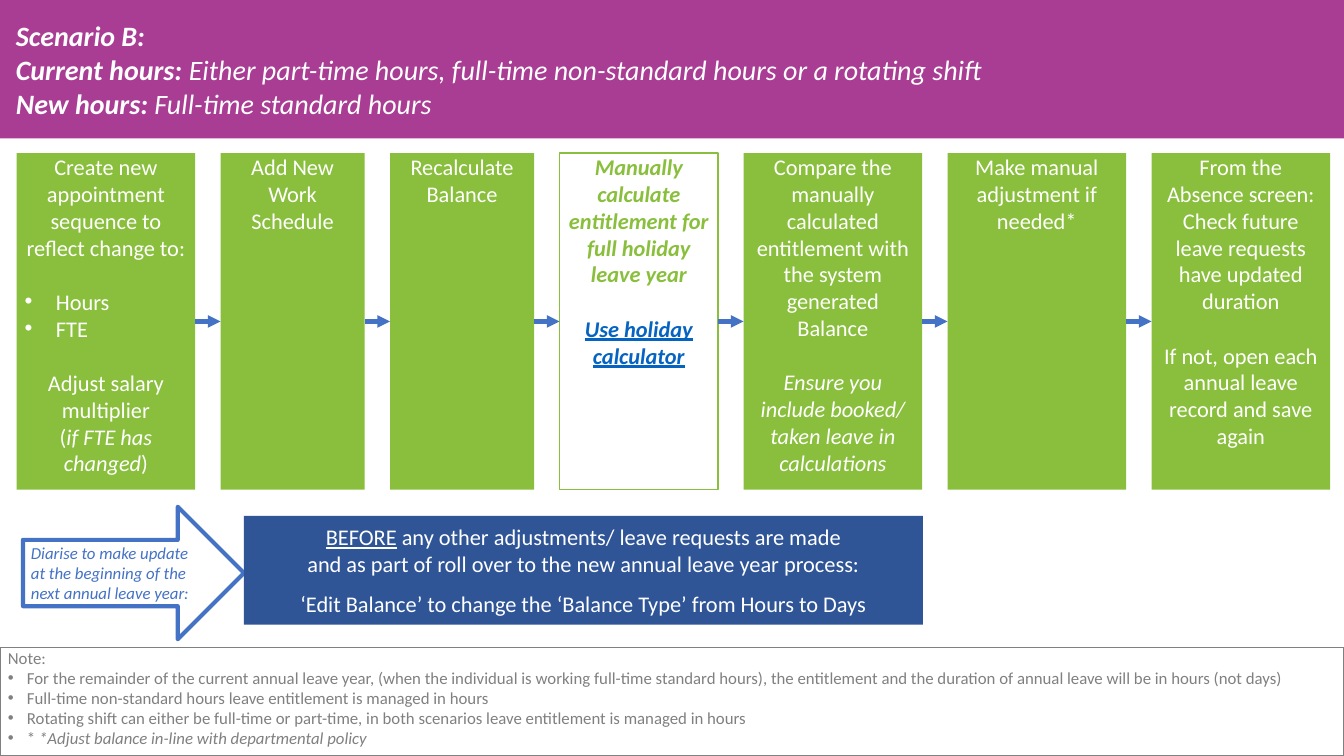
import lxml.etree
import pptx
import pptx.dml.color
import pptx.enum.shapes
import pptx.enum.text
import pptx.oxml.ns
import pptx.util

Cm, Pt = pptx.util.Cm, pptx.util.Pt
Shape = pptx.enum.shapes.MSO_SHAPE
Align = pptx.enum.text.PP_ALIGN
Anchor = pptx.enum.text.MSO_ANCHOR

WHITE, GREEN, PURPLE, NAVY = "FFFFFF", "89BF3C", "A93D94", "2F5597"
BLUE, GREY, LINK = "4472C4", "808080", "0563C1"
BOLD, ITALIC, UNDERLINE = {"bold": True}, {"italic": True}, {"underline": True}
BOLD_ITALIC = {**BOLD, **ITALIC}


def colour(value):
    return pptx.dml.color.RGBColor.from_string(value)


def line(*runs, **options):
    return [run if isinstance(run, tuple) else (run, {}) for run in runs], options


class ScenarioSlide:
    """Holds the shared style and draws each kind of element on the current slide."""

    font = "Calibri"
    side_inset = 0.2

    def __init__(self, presentation):
        self.slide = presentation.slides.add_slide(presentation.slide_layouts[5])

    def place(self, shape, box):
        for name, value in zip(("left", "top", "width", "height"), box):
            setattr(shape, name, Cm(value))

    def paint(self, shape, fill=None, outline=None, weight=1):
        if fill:
            shape.fill.solid()
            shape.fill.fore_color.rgb = colour(fill)
        else:
            shape.fill.background()
        if outline:
            shape.line.color.rgb = colour(outline)
            shape.line.width = Pt(weight)
        else:
            shape.line.fill.background()

    def add_text(self, shape, lines, size, text_colour, align, anchor, insets):
        frame = shape.text_frame
        settings = {
            "word_wrap": True,
            "auto_size": pptx.enum.text.MSO_AUTO_SIZE.NONE,
            "vertical_anchor": anchor,
            "margin_left": Cm(insets[0]),
            "margin_right": Cm(insets[1]),
            "margin_top": 0,
            "margin_bottom": 0,
        }
        for name, value in settings.items():
            setattr(frame, name, value)
        for index, (runs, options) in enumerate(lines):
            paragraph = frame.add_paragraph() if index else frame.paragraphs[0]
            indent = options.get("bullet")
            layout = {
                "alignment": Align.LEFT if indent else align,
                "line_spacing": 1.0,
                "space_before": Pt(options.get("gap", 0)),
                "space_after": Pt(0),
            }
            for name, value in layout.items():
                setattr(paragraph, name, value)
            if indent:
                self.bullet(paragraph, indent)
            for text, formats in runs:
                run = paragraph.add_run()
                run.text = text
                style = {"name": self.font, "size": Pt(size), **formats}
                run.font.color.rgb = colour(style.pop("colour", text_colour))
                for name, value in style.items():
                    setattr(run.font, name, value)

    def bullet(self, paragraph, indent):
        properties = paragraph._p.get_or_add_pPr()
        properties.set("marL", str(Cm(indent)))
        properties.set("indent", str(-Cm(indent)))
        for tag, name, value in (("a:buFont", "typeface", "Arial"), ("a:buChar", "char", "•")):
            lxml.etree.SubElement(properties, pptx.oxml.ns.qn(tag)).set(name, value)

    def title(self, box, lines):
        shape = self.slide.shapes.title
        self.place(shape, box)
        self.paint(shape, PURPLE)
        self.add_text(shape, lines, 20, WHITE, Align.LEFT, Anchor.MIDDLE, (0.4, 0))

    def box(self, box, lines, size=16, text_colour=WHITE, align=Align.CENTER, anchor=Anchor.TOP,
            kind=Shape.RECTANGLE, **paint):
        shape = self.slide.shapes.add_shape(kind, *map(Cm, box))
        shape.shadow.inherit = False
        self.paint(shape, **paint)
        self.add_text(shape, lines, size, text_colour, align, anchor, (self.side_inset,) * 2)

    def arrow(self, start, end, height):
        connector = self.slide.shapes.add_connector(
            pptx.enum.shapes.MSO_CONNECTOR.STRAIGHT, Cm(start), Cm(height), Cm(end), Cm(height))
        connector.line.color.rgb = colour(BLUE)
        connector.line.width = Pt(3)
        outline = connector.line._get_or_add_ln()
        lxml.etree.SubElement(outline, pptx.oxml.ns.qn("a:tailEnd")).set("type", "triangle")
        lxml.etree.SubElement(connector._element.spPr, pptx.oxml.ns.qn("a:effectLst"))


BLANK_LINE = 19.5
FILLED = {"fill": GREEN}
OUTLINED = {"outline": GREEN, "text_colour": GREEN}
STEPS = [
    (4.5, FILLED, [
        line("Create new appointment sequence to reflect change to:"),
        line("Hours", bullet=0.79, gap=BLANK_LINE),
        line("FTE", bullet=0.79),
        line("Adjust salary multiplier", gap=BLANK_LINE),
        line("(", ("if FTE has changed", ITALIC), ")"),
    ]),
    (3.63, FILLED, [line("Add New Work Schedule")]),
    (3.63, FILLED, [line("Recalculate Balance")]),
    (4, OUTLINED, [
        line(("Manually calculate entitlement for full holiday leave year", BOLD_ITALIC)),
        line(("Use holiday calculator", {**BOLD_ITALIC, **UNDERLINE, "colour": LINK}),
             gap=BLANK_LINE),
    ]),
    (4.5, FILLED, [
        line("Compare the manually calculated entitlement with the system generated Balance"),
        line(("Ensure you include booked/ taken leave in calculations", ITALIC), gap=BLANK_LINE),
    ]),
    (4.5, FILLED, [line("Make manual adjustment if needed*")]),
    (4.5, FILLED, [
        line("From the Absence screen:"),
        line("Check future leave requests have updated duration"),
        line("If not, open each annual leave record and save again", gap=BLANK_LINE),
    ]),
]
NOTES = [
    ["For the remainder of the current annual leave year, (when the individual is working "
     "full-time standard hours), the entitlement and the duration of annual leave will be "
     "in hours (not days)"],
    ["Full-time non-standard hours leave entitlement is managed in hours"],
    ["Rotating shift can either be full-time or part-time, in both scenarios leave "
     "entitlement is managed in hours"],
    ["* ", ("*Adjust balance in-line with departmental policy", ITALIC)],
]


def main():
    width, height = 33.87, 19.05
    presentation = pptx.Presentation()
    presentation.slide_width, presentation.slide_height = Cm(width), Cm(height)
    scenario = ScenarioSlide(presentation)

    scenario.title((0, 0, width, 3.49), [
        line(("Scenario B:", BOLD_ITALIC)),
        line(("Current hours: ", BOLD_ITALIC),
             ("Either part-time hours, full-time non-standard hours or a rotating shift",
              {**ITALIC, "bold": False})),
        line(("New hours: ", BOLD_ITALIC),
             ("Full-time standard hours", {**ITALIC, "bold": False})),
    ])

    left, top, step_height, gap = 0.42, 3.86, 8.48, 0.64
    for index, (step_width, style, lines) in enumerate(STEPS):
        scenario.box((left, top, step_width, step_height), lines, **style)
        if index:
            scenario.arrow(left - gap, left, top + step_height / 2)
        left += step_width + gap

    scenario.box((0.58, 12.77, 5.57, 3.34), [
        line(("Diarise to make update at the beginning of the next annual leave year:", ITALIC)),
    ], size=12, text_colour=BLUE, align=Align.LEFT, anchor=Anchor.MIDDLE,
        kind=Shape.RIGHT_ARROW, outline=BLUE, weight=3)
    scenario.box((6.15, 13, 17.11, 2.74), [
        line(("BEFORE", UNDERLINE), " any other adjustments/ leave requests are made"),
        line("and as part of roll over to the new annual leave year process:"),
        line("‘Edit Balance’ to change the ‘Balance Type’ from Hours to Days", gap=9.75),
    ], anchor=Anchor.MIDDLE, fill=NAVY)
    scenario.box((0, 16.31, width, 2.74),
                 [line("Note:")] + [line(*runs, bullet=0.48) for runs in NOTES],
                 size=12, text_colour=GREY, align=Align.LEFT, outline=GREY)
    presentation.save("out.pptx")


if __name__ == "__main__":
    main()
